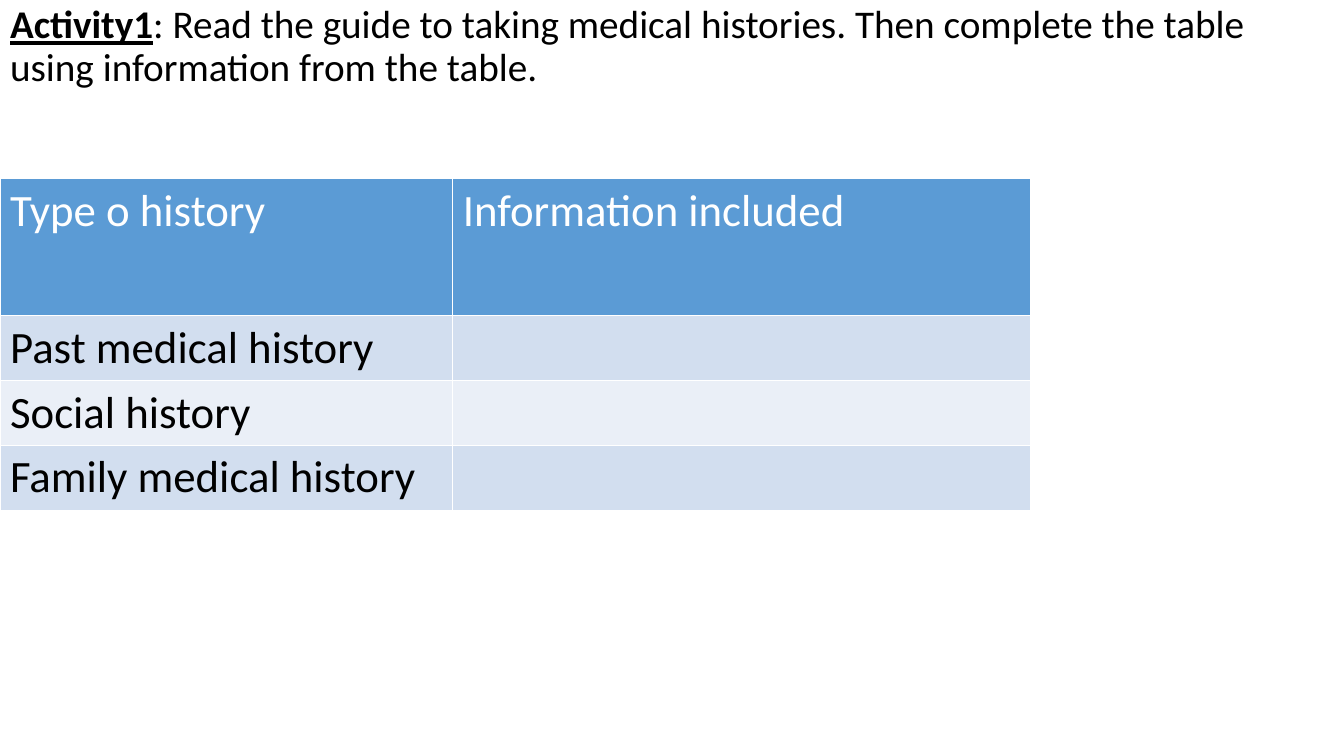
"""Build the medical history activity slide with its instruction and table."""
from pptx import Presentation
from pptx.dml.color import RGBColor
from pptx.enum.text import MSO_ANCHOR, MSO_AUTO_SIZE
from pptx.oxml.xmlchemy import OxmlElement
from pptx.util import Inches, Pt

BLACK = RGBColor(0x00, 0x00, 0x00)
WHITE = RGBColor(0xFF, 0xFF, 0xFF)
BLUE = RGBColor(0x5B, 0x9B, 0xD5)
BAND_DARK = RGBColor(0xD2, 0xDE, 0xEF)
BAND_LIGHT = RGBColor(0xEA, 0xEF, 0xF7)


def format_font(font, size, color, bold=False):
    font.name = "Calibri"
    font.size = Pt(size)
    font.color.rgb = color
    font.bold = bold


prs = Presentation()
prs.slide_width = Inches(13.33)
prs.slide_height = Inches(7.5)
s = prs.slides.add_slide(prs.slide_layouts.get_by_name("Title and Content"))
title = s.shapes.title.element
title.getparent().remove(title)

body = s.placeholders[1]
body.left, body.top = Inches(0), Inches(0)
body.width, body.height = prs.slide_width, prs.slide_height
tf = body.text_frame
tf.word_wrap = True
tf.auto_size = MSO_AUTO_SIZE.NONE
tf.vertical_anchor = MSO_ANCHOR.TOP
p = tf.paragraphs[0]
p.line_spacing = 0.9
p.space_before = Pt(10)
pPr = p._p.get_or_add_pPr()
pPr.set("marL", "0")
pPr.set("indent", "0")
pPr.append(OxmlElement("a:buNone"))
instruction = [
    ("Activity1", True),
    (": Read the guide to taking medical histories. "
     "Then complete the table using information from the table.", False),
]
for text, is_label in instruction:
    r = p.add_run()
    r.text = text
    format_font(r.font, 28, BLACK, is_label)
    r.font.underline = is_label

rows = [
    ("Type o history", "Information included"),
    ("Past medical history", ""),
    ("Social history", ""),
    ("Family medical history", ""),
]
row_heights = [1.36, 0.64, 0.64, 0.64]
table = s.shapes.add_table(len(rows), 2, Inches(0), Inches(1.77),
                           Inches(10.22), Inches(sum(row_heights))).table
for column, width in zip(table.columns, (4.49, 5.73)):
    column.width = Inches(width)
for i, (texts, height) in enumerate(zip(rows, row_heights)):
    table.rows[i].height = Inches(height)
    fill = BLUE if i == 0 else BAND_DARK if i % 2 else BAND_LIGHT
    for cell, text in zip(table.rows[i].cells, texts):
        cell.fill.solid()
        cell.fill.fore_color.rgb = fill
        cell.text_frame.text = text
        for r in cell.text_frame.paragraphs[0].runs:
            format_font(r.font, 32, BLACK if i else WHITE)

prs.save("out.pptx")
